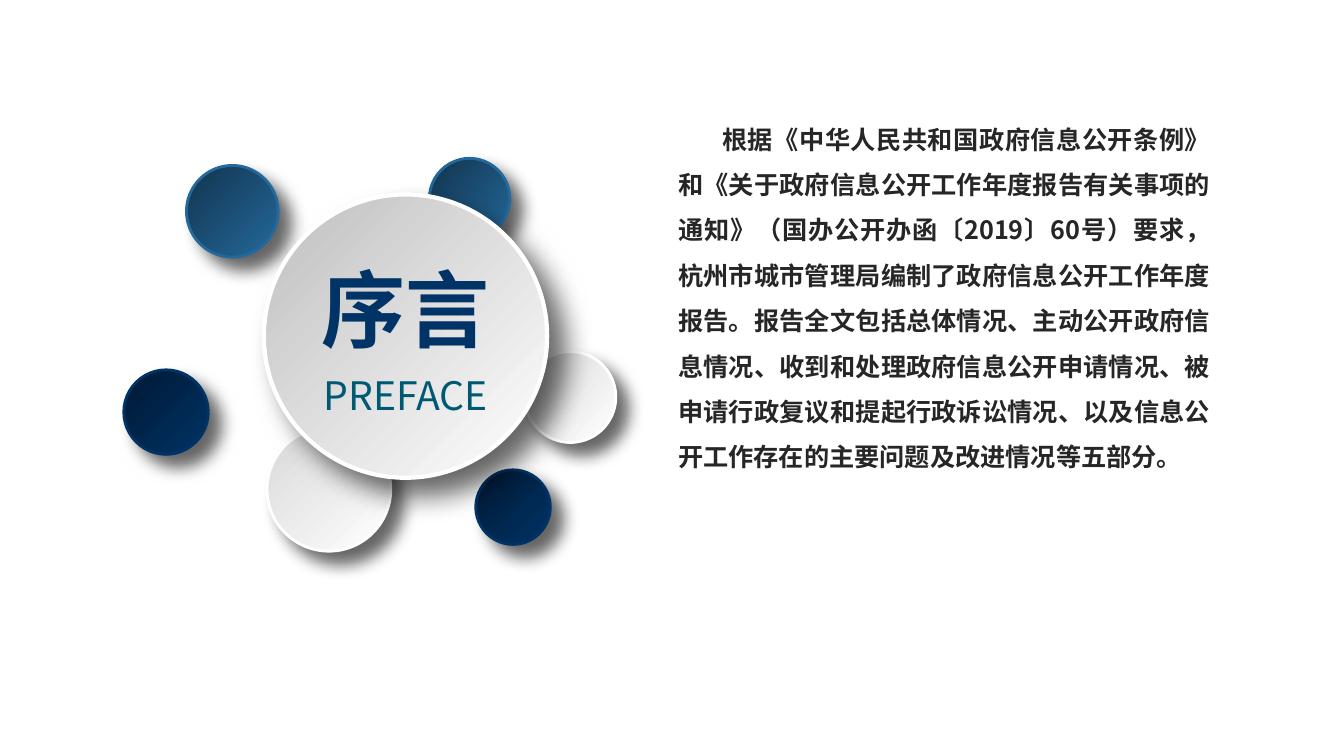
from dataclasses import dataclass

from lxml import etree
from pptx import Presentation
from pptx import util as u
from pptx.dml.color import RGBColor
from pptx.enum import shapes, text
from pptx.oxml.ns import qn


@dataclass(frozen=True)
class Theme:
    font: str = "Noto Sans CJK SC"
    navy: tuple = ("003366", "001933")
    blue: tuple = ("24699C", "12344E")
    light: tuple = ("FFFFFF", "D9D9D9")
    silver: tuple = ("FFFFFF", "BFBFBF")
    teal: str = "005973"
    ink: str = "262626"
    title_size: int = 60
    subtitle_size: int = 28
    body_size: int = 18


THEME = Theme()

# Offset from the cluster's corner and diameter in cm, then the gradient
SATELLITES = [
    (8.87, 7.85, 1.88, THEME.navy),
    (1.58, 0.18, 2.31, THEME.blue),
    (0, 5.33, 2.13, THEME.navy),
    (7.7, 0, 2.03, THEME.blue),
    (3.61, 6.78, 3.12, THEME.light),
    (10.11, 4.87, 2.29, THEME.light),
]

BODY = (
    "根据《中华人民共和国政府信息公开条例》和《关于政府信息公开工作年度报告有关事项的通知》"
    "（国办公开办函〔2019〕60号）要求，杭州市城市管理局编制了政府信息公开工作年度报告。"
    "报告全文包括总体情况、主动公开政府信息情况、收到和处理政府信息公开申请情况、"
    "被申请行政复议和提起行政诉讼情况、以及信息公开工作存在的主要问题及改进情况等五部分。"
)


def add_shadow(sp, blur, distance):
    """Cast a soft black shadow to the lower right."""
    sp.shadow.inherit = False
    effects = sp._element.spPr.find(qn("a:effectLst"))
    shadow = etree.SubElement(
        effects, qn("a:outerShdw"), blurRad=str(u.Pt(blur)), dist=str(u.Pt(distance)),
        dir=str(45 * 60000), algn="tl", rotWithShape="0")
    color = etree.SubElement(shadow, qn("a:srgbClr"), val="000000")
    etree.SubElement(color, qn("a:alpha"), val="60000")


def add_disc(s, x, y, size, colors, rim=2, blur=12, distance=12):
    sp = s.shapes.add_shape(shapes.MSO_SHAPE.OVAL, u.Cm(x), u.Cm(y), u.Cm(size), u.Cm(size))
    sp.fill.gradient()
    sp.fill.gradient_angle = 135
    for stop, color in zip(sp.fill.gradient_stops, colors):
        stop.color.rgb = RGBColor.from_string(color)
    sp.line.color.rgb = RGBColor.from_string(colors[0])
    sp.line.width = u.Pt(rim)
    add_shadow(sp, blur, distance)


def write(sp, words, size, color, bold=False, align=text.PP_ALIGN.CENTER, wrap=True):
    tf = sp.text_frame
    tf.text = words
    tf.word_wrap = wrap
    tf.auto_size = text.MSO_AUTO_SIZE.NONE
    tf.vertical_anchor = text.MSO_ANCHOR.TOP
    p = tf.paragraphs[0]
    p.alignment = align
    font = p.font
    font.size, font.bold = u.Pt(size), bold
    font.color.rgb = RGBColor.from_string(color)
    font.name = THEME.font
    etree.SubElement(font._element, qn("a:ea"), typeface=THEME.font)
    return p


def add_cluster(s, x, y):
    """Place the discs and the heading with the cluster's corner at x, y (cm)."""
    for dx, dy, size, colors in SATELLITES:
        add_disc(s, x + dx, y + dy, size, colors)
    add_disc(s, x + 3.53, y + 0.91, 7.14, THEME.silver, rim=3, blur=20, distance=16)

    title = s.shapes.title
    title.left, title.top = u.Cm(x + 4.7), u.Cm(y + 2.36)
    title.width, title.height = u.Cm(4.78), u.Cm(2.82)
    s.shapes._spTree.append(title._element)  # bring in front of the discs
    write(title, "序言", THEME.title_size, THEME.navy[0], bold=True, wrap=False)

    subtitle = s.shapes.add_textbox(u.Cm(x + 3.84), u.Cm(y + 5.23), u.Cm(6.53), u.Cm(1.45))
    write(subtitle, "PREFACE", THEME.subtitle_size, THEME.teal)


def add_body(s, x, y, width, height):
    sp = s.shapes.add_textbox(u.Cm(x), u.Cm(y), u.Cm(width), u.Cm(height))
    p = write(sp, BODY, THEME.body_size, THEME.ink, bold=True, align=text.PP_ALIGN.JUSTIFY)
    p.line_spacing = 1.5
    p._p.get_or_add_pPr().set("indent", str(u.Cm(1.11)))


def main():
    prs = Presentation()
    prs.slide_width, prs.slide_height = u.Cm(33.87), u.Cm(19.05)
    s = prs.slides.add_slide(prs.slide_layouts[5])
    add_cluster(s, 3.12, 3.99)
    add_body(s, 16.84, 2.62, 13.92, 9.47)
    prs.save("out.pptx")


if __name__ == "__main__":
    main()
